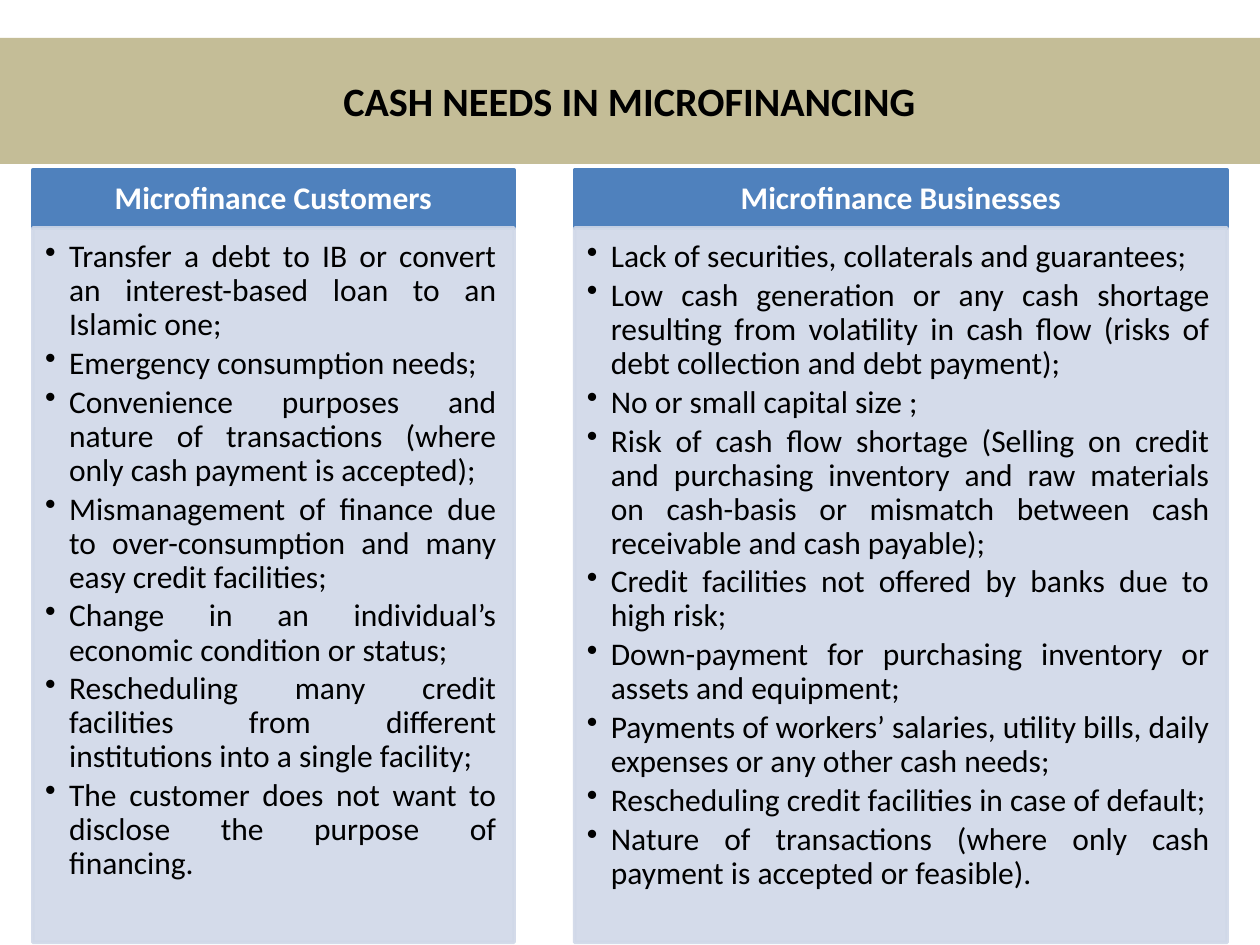
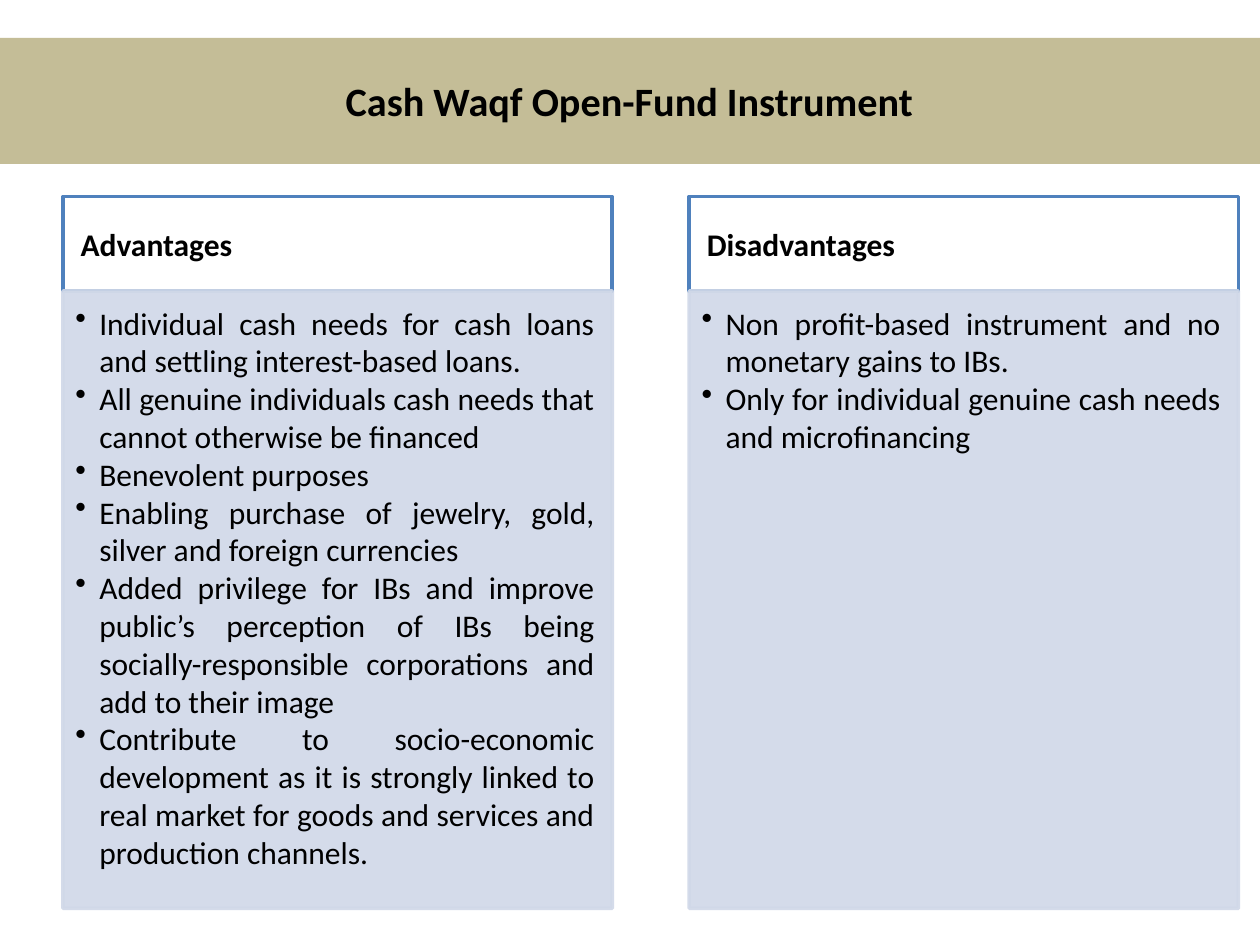
from dataclasses import dataclass

import lxml.etree
import pptx
import pptx.dml.color
import pptx.enum.shapes
import pptx.enum.text
import pptx.oxml.ns
import pptx.util

EMU_PER_PX = 9144
ALIGN = pptx.enum.text.PP_ALIGN
ANCHOR = pptx.enum.text.MSO_ANCHOR


@dataclass(frozen=True)
class Theme:
    font: str = "Calibri"
    title_size: int = 23
    text_size: int = 18
    line_width: int = 2
    band: str = "C4BD97"
    accent: str = "4F81BD"
    panel: str = "D0D8E8"
    panel_opacity: int = 90
    ink: str = "000000"
    paper: str = "FFFFFF"


@dataclass(frozen=True)
class Box:
    left: int
    top: int
    width: int
    height: int


@dataclass(frozen=True)
class Style:
    top: int
    header_height: int
    body_height: int
    header_fill: str | None
    header_color: str
    header_align: ALIGN
    line_spacing: float
    space_after: float


@dataclass(frozen=True)
class Column:
    left: int
    width: int
    heading: str
    points: tuple[str, ...]


@dataclass(frozen=True)
class Topic:
    title: str
    style: Style
    columns: tuple[Column, ...]


THEME = Theme()
PAGE = Box(0, 0, 1000, 750)
TITLE_BAND = Box(0, 30, 1000, 100)
HEADER_INSETS = (14, 8, 14, 8)
BODY_INSETS = (10, 10, 14, 16)
BULLET_INDENT = 19

FILLED = Style(135, 46, 567, THEME.accent, THEME.paper, ALIGN.CENTER, 0.9, 2.7)
OUTLINED = Style(156, 75, 490, None, THEME.ink, ALIGN.JUSTIFY, 1.0, 0)

TOPICS = (
    Topic("CASH NEEDS IN MICROFINANCING", FILLED, (
        Column(26, 382, "Microfinance Customers", (
            "Transfer a debt to IB or convert an interest-based loan to an Islamic one;",
            "Emergency consumption needs;",
            "Convenience purposes and nature of transactions (where only cash payment is accepted);",
            "Mismanagement of finance due to over-consumption and many easy credit facilities;",
            "Change in an individual’s economic condition or status;",
            "Rescheduling many credit facilities from different institutions into a single facility;",
            "The customer does not want to disclose the purpose of financing.",
        )),
        Column(456, 518, "Microfinance Businesses", (
            "Lack of securities, collaterals and guarantees;",
            "Low cash generation or any cash shortage resulting from volatility in cash flow "
            "(risks of debt collection and debt payment);",
            "No or small capital size ;",
            "Risk of cash flow shortage (Selling on credit and purchasing inventory and raw materials "
            "on cash-basis or mismatch between cash receivable and cash payable);",
            "Credit facilities not offered by banks due to high risk;",
            "Down-payment for purchasing inventory or assets and equipment;",
            "Payments of workers’ salaries, utility bills, daily expenses or any other cash needs;",
            "Rescheduling credit facilities in case of default;",
            "Nature of transactions (where only cash payment is accepted or feasible).",
        )),
    )),
    Topic("Cash Waqf Open-Fund Instrument", OUTLINED, (
        Column(50, 436, "Advantages", (
            "Individual cash needs for cash loans and settling interest-based loans.",
            "All genuine individuals cash needs that cannot otherwise be financed",
            "Benevolent purposes",
            "Enabling purchase of jewelry, gold, silver and foreign currencies",
            "Added privilege for IBs and improve public’s perception of IBs being "
            "socially-responsible corporations and add to their image",
            "Contribute to socio-economic development as it is strongly linked to real market "
            "for goods and services and production channels.",
        )),
        Column(547, 436, "Disadvantages", (
            "Non profit-based instrument and no monetary gains to IBs.",
            "Only for individual genuine cash needs and microfinancing",
        )),
    )),
)


def px(length: int) -> pptx.util.Emu:
    return pptx.util.Emu(length * EMU_PER_PX)


def rgb(color: str) -> pptx.dml.color.RGBColor:
    return pptx.dml.color.RGBColor.from_string(color)


def set_font(para, size: int, color: str, bold: bool) -> None:
    para.font.name = THEME.font
    para.font.size = pptx.util.Pt(size)
    para.font.bold = bold
    para.font.color.rgb = rgb(color)


def set_opacity(fill_parent, percent: int) -> None:
    for color in fill_parent.iter(pptx.oxml.ns.qn("a:srgbClr")):
        alpha = lxml.etree.SubElement(color, pptx.oxml.ns.qn("a:alpha"))
        alpha.set("val", str(percent * 1000))


def add_bullet(para) -> None:
    properties = para._p.get_or_add_pPr()
    properties.set("marL", str(px(BULLET_INDENT)))
    properties.set("indent", str(-px(BULLET_INDENT)))
    bullet = lxml.etree.SubElement(properties, pptx.oxml.ns.qn("a:buChar"))
    bullet.set("char", "•")


def add_panel(page, box: Box, fill: str | None, line: str,
              insets: tuple[int, int, int, int], anchor: ANCHOR):
    panel = page.shapes.add_shape(
        pptx.enum.shapes.MSO_SHAPE.RECTANGLE,
        px(box.left), px(box.top), px(box.width), px(box.height))
    panel.shadow.inherit = False
    if fill is None:
        panel.fill.background()
    else:
        panel.fill.solid()
        panel.fill.fore_color.rgb = rgb(fill)
    panel.line.color.rgb = rgb(line)
    panel.line.width = pptx.util.Pt(THEME.line_width)
    frame = panel.text_frame
    frame.word_wrap = True
    frame.vertical_anchor = anchor
    frame.margin_left, frame.margin_top, frame.margin_right, frame.margin_bottom = map(px, insets)
    return panel


def add_column(page, column: Column, style: Style) -> None:
    header_box = Box(column.left, style.top, column.width, style.header_height)
    header = add_panel(page, header_box, style.header_fill, THEME.accent,
                       HEADER_INSETS, ANCHOR.MIDDLE)
    para = header.text_frame.paragraphs[0]
    para.text = column.heading
    para.alignment = style.header_align
    para.line_spacing = style.line_spacing
    set_font(para, THEME.text_size, style.header_color, True)

    body_box = Box(column.left, style.top + style.header_height, column.width, style.body_height)
    body = add_panel(page, body_box, THEME.panel, THEME.panel, BODY_INSETS, ANCHOR.TOP)
    set_opacity(body._element.spPr, THEME.panel_opacity)
    frame = body.text_frame
    for index, point in enumerate(column.points):
        para = frame.add_paragraph() if index else frame.paragraphs[0]
        para.text = point
        para.alignment = ALIGN.JUSTIFY
        para.line_spacing = style.line_spacing
        para.space_after = pptx.util.Pt(style.space_after)
        add_bullet(para)
        set_font(para, THEME.text_size, THEME.ink, False)


def format_title(page, text: str) -> None:
    title = page.shapes.title
    title.left, title.top = px(TITLE_BAND.left), px(TITLE_BAND.top)
    title.width, title.height = px(TITLE_BAND.width), px(TITLE_BAND.height)
    title.fill.solid()
    title.fill.fore_color.rgb = rgb(THEME.band)
    frame = title.text_frame
    frame.auto_size = pptx.enum.text.MSO_AUTO_SIZE.NONE
    frame.vertical_anchor = ANCHOR.MIDDLE
    para = frame.paragraphs[0]
    para.text = text
    para.alignment = ALIGN.CENTER
    set_font(para, THEME.title_size, THEME.ink, True)


def main() -> None:
    deck = pptx.Presentation()
    deck.slide_width, deck.slide_height = px(PAGE.width), px(PAGE.height)
    title_only = deck.slide_layouts.get_by_name("Title Only")
    for topic in TOPICS:
        page = deck.slides.add_slide(title_only)
        format_title(page, topic.title)
        for column in topic.columns:
            add_column(page, column, topic.style)
    deck.save("out.pptx")


if __name__ == "__main__":
    main()
